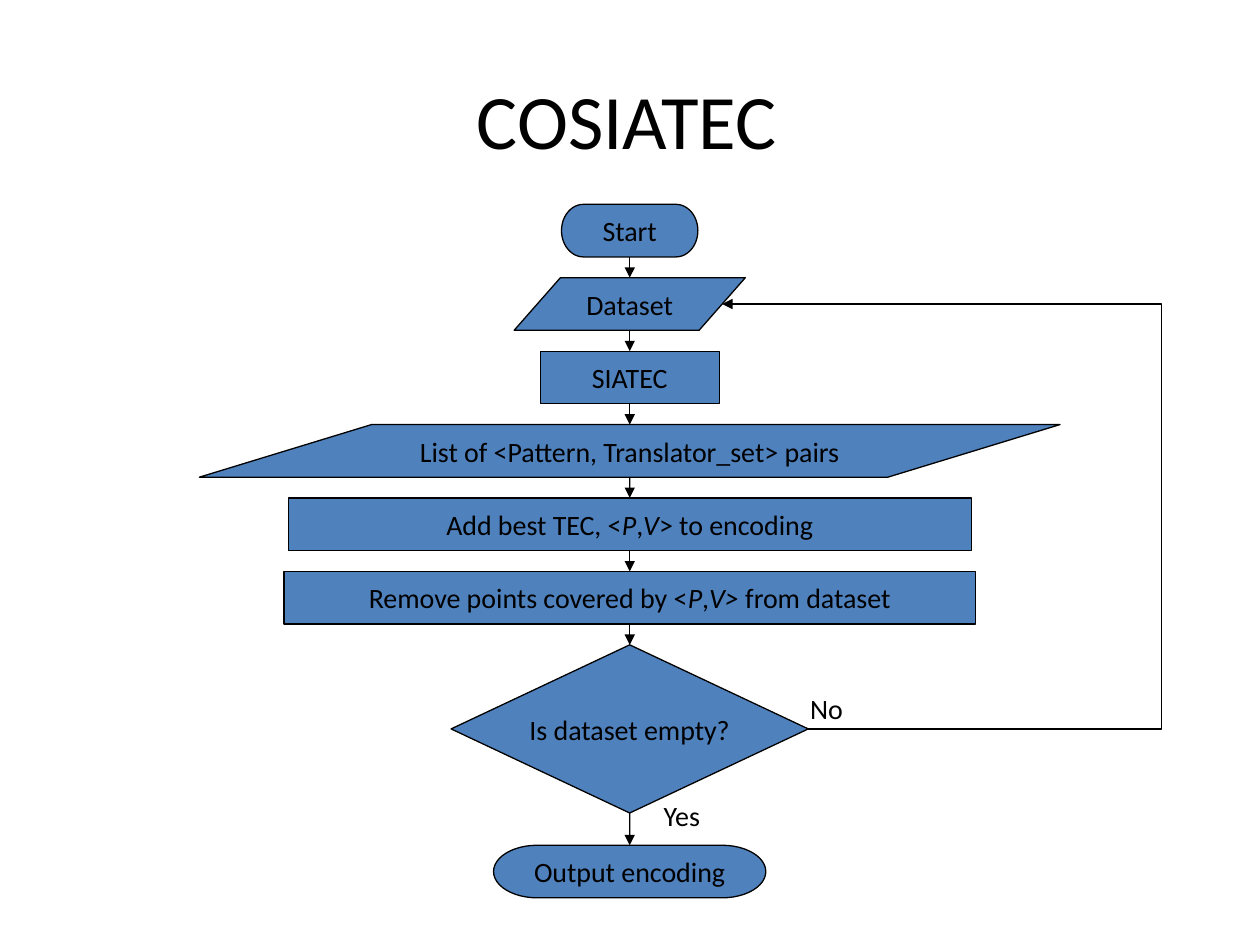
from dataclasses import dataclass

from lxml.etree import SubElement
from pptx import Presentation
from pptx.dml.color import RGBColor
from pptx.enum.shapes import MSO_CONNECTOR as Link, MSO_SHAPE as Shape
from pptx.enum.text import MSO_ANCHOR as Anchor, PP_ALIGN as Align
from pptx.oxml.ns import qn
from pptx.util import Cm, Pt


@dataclass(frozen=True)
class Theme:
    font: str = "Calibri"
    ink: RGBColor = RGBColor(0x00, 0x00, 0x00)
    fill: RGBColor = RGBColor(0x4F, 0x81, 0xBD)
    title_size: Pt = Pt(44)
    body_size: Pt = Pt(16)
    line_width: Pt = Pt(0.75)


@dataclass(frozen=True)
class Box:
    left: float
    top: float
    width: float
    height: float

    def place(self):
        return Cm(self.left), Cm(self.top), Cm(self.width), Cm(self.height)


THEME = Theme()
ROW_HEIGHT = 1.06
ROW_PITCH = 1.48
DECISION_HEIGHT = 3.39
OUTPUT_GAP = 0.65
TOP, LEFT, BOTTOM, RIGHT = range(4)

STEPS = [
    (Shape.FLOWCHART_TERMINATOR, 2.75, "Start"),
    (Shape.FLOWCHART_DATA, 4.66, "Dataset"),
    (Shape.FLOWCHART_PROCESS, 3.61, "SIATEC"),
    (Shape.FLOWCHART_DATA, 17.35, "List of <Pattern, Translator_set> pairs"),
    (Shape.FLOWCHART_PROCESS, 13.77, "Add best TEC, <*P*,*V*> to encoding"),
    (Shape.FLOWCHART_PROCESS, 13.94, "Remove points covered by <*P*,*V>* from dataset"),
    (Shape.FLOWCHART_DECISION, 7.2, "Is dataset empty?"),
    (Shape.FLOWCHART_TERMINATOR, 5.49, "Output encoding"),
]


def write(frame, text, size, align):
    para = frame.paragraphs[0]
    para.alignment = align
    para.font.name = THEME.font
    para.font.size = size
    para.font.color.rgb = THEME.ink
    for index, part in enumerate(text.split("*")):
        span = para.add_run()
        span.text = part
        if index % 2:
            span.font.italic = True


def add_title(page, box, text):
    title = page.shapes.title
    title.left, title.top, title.width, title.height = box.place()
    title.text_frame.vertical_anchor = Anchor.MIDDLE
    write(title.text_frame, text, THEME.title_size, Align.CENTER)


def add_step(page, box, kind, text):
    step = page.shapes.add_shape(kind, *box.place())
    step.shadow.inherit = False
    step.fill.solid()
    step.fill.fore_color.rgb = THEME.fill
    step.line.color.rgb = THEME.ink
    step.line.width = THEME.line_width
    step.text_frame.word_wrap = False
    step.text_frame.vertical_anchor = Anchor.MIDDLE
    write(step.text_frame, text, THEME.body_size, Align.CENTER)
    return step


def add_label(page, box, text):
    label = page.shapes.add_textbox(*box.place())
    label.text_frame.word_wrap = True
    write(label.text_frame, text, THEME.body_size, Align.LEFT)


def add_arrow(page, kind, start, end):
    arrow = page.shapes.add_connector(kind, *start, *end)
    arrow.line.color.rgb = THEME.ink
    arrow.line.width = THEME.line_width
    properties = arrow.element.spPr
    SubElement(properties.find(qn("a:ln")), qn("a:tailEnd"), type="triangle")
    SubElement(properties, qn("a:effectLst"))
    return arrow


def join_steps(page, upper, lower):
    center = upper.left + upper.width // 2
    arrow = add_arrow(page, Link.STRAIGHT,
                      (center, upper.top + upper.height), (center, lower.top))
    if upper.auto_shape_type != Shape.FLOWCHART_DATA:
        arrow.begin_connect(upper, BOTTOM)
    if lower.auto_shape_type != Shape.FLOWCHART_DATA:
        arrow.end_connect(lower, TOP)


def add_loop(page, decision, dataset, turn):
    start = decision.left + decision.width, decision.top + decision.height // 2
    end = dataset.left + dataset.width * 9 // 10, dataset.top + dataset.height // 2
    loop = add_arrow(page, Link.ELBOW, start, end)
    bend = round(100000 * (turn - start[0]) / (end[0] - start[0]))
    geometry = loop.element.spPr.find(qn("a:prstGeom"))
    guides = geometry.find(qn("a:avLst"))
    if guides is None:
        guides = SubElement(geometry, qn("a:avLst"))
    SubElement(guides, qn("a:gd"), name="adj1", fmla=f"val {bend}")


def add_flowchart(page, box):
    steps = []
    for row, (kind, width, text) in enumerate(STEPS):
        top = box.top + row * ROW_PITCH
        height = ROW_HEIGHT
        if kind == Shape.FLOWCHART_DECISION:
            height = DECISION_HEIGHT
        elif row == len(STEPS) - 1:
            top = box.top + (row - 1) * ROW_PITCH + DECISION_HEIGHT + OUTPUT_GAP
        left = box.left + (box.width - width) / 2
        steps.append(add_step(page, Box(left, top, width, height), kind, text))
    add_label(page, Box(box.left + 12.06, box.top + 9.7, 1.7, 0.94), "No")
    add_label(page, Box(box.left + 9.11, box.top + 11.86, 2.12, 0.94), "Yes")
    for upper, lower in zip(steps, steps[1:]):
        join_steps(page, upper, lower)
    add_loop(page, steps[6], steps[1], Cm(box.left + 19.4))


def main():
    deck = Presentation()
    deck.slide_width, deck.slide_height = Cm(25.4), Cm(19.05)
    page = deck.slides.add_slide(deck.slide_layouts[5])
    add_title(page, Box(1.3, 1.32, 22.68, 2.13), "COSIATEC")
    add_flowchart(page, Box(4.02, 4.12, 17.35, 13.99))
    deck.save("out.pptx")


if __name__ == "__main__":
    main()
